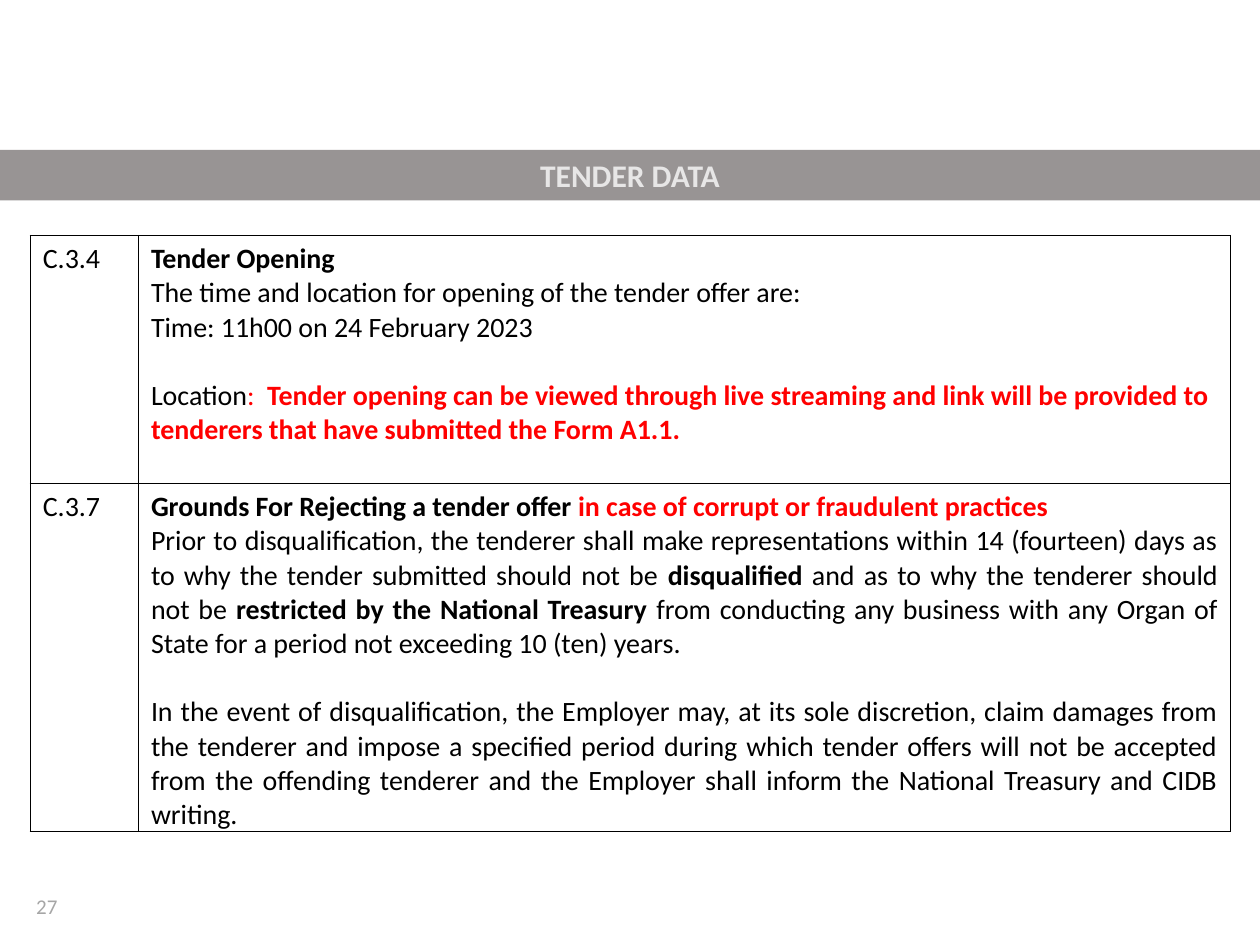
from lxml import etree
from pptx import Presentation
from pptx import util as u
from pptx.dml.color import RGBColor
from pptx.enum import shapes, text
from pptx.oxml import ns

BLACK = RGBColor(0x00, 0x00, 0x00)
RED = RGBColor(0xFF, 0x00, 0x00)
BAND_GREY = RGBColor(0x98, 0x94, 0x94)
TITLE_GREY = RGBColor(0xE7, 0xE6, 0xE6)
NUMBER_GREY = RGBColor(0xA6, 0xA6, 0xA6)
LEFT, CENTER, JUSTIFY = text.PP_ALIGN.LEFT, text.PP_ALIGN.CENTER, text.PP_ALIGN.JUSTIFY
SLIDE_WIDTH = u.Cm(25.4)
LINE_GAP = 19.5

OPENING = [
    (LEFT, 0, [("Tender Opening", BLACK, True)]),
    (LEFT, 0, [("The time and location for opening of the tender offer are:", BLACK, False)]),
    (LEFT, 0, [("Time: 11h00 on 24 February 2023", BLACK, False)]),
    (LEFT, LINE_GAP, [
        ("Location", BLACK, False),
        (":  ", RED, False),
        ("Tender opening can be viewed through live streaming and link will be "
         "provided to tenderers that have submitted the Form A1.1.", RED, True),
    ]),
]
REJECTION = [
    (JUSTIFY, 0, [
        ("Grounds For Rejecting a tender offer ", BLACK, True),
        ("in case of corrupt or fraudulent practices", RED, True),
    ]),
    (JUSTIFY, 0, [
        ("Prior to disqualification, the tenderer shall make representations within 14 "
         "(fourteen) days as to why the tender submitted should not be ", BLACK, False),
        ("disqualified", BLACK, True),
        (" and as to why the tenderer should not be ", BLACK, False),
        ("restricted by the National Treasury ", BLACK, True),
        ("from conducting any business with any Organ of State for a period not "
         "exceeding 10 (ten) years.", BLACK, False),
    ]),
    (JUSTIFY, LINE_GAP, [
        ("In the event of disqualification, the Employer may, at its sole discretion, claim "
         "damages from the tenderer and impose a specified period during which tender offers "
         "will not be accepted from the offending tenderer and the Employer shall inform the "
         "National Treasury and CIDB writing.", BLACK, False),
    ]),
]


def label(words, color=BLACK, bold=False, align=LEFT):
    return [(align, 0, [(words, color, bold)])]


class TenderPage:
    """Draws the elements of one tender briefing page in a shared style."""

    def __init__(self, page, font="Calibri"):
        self.page = page
        self.font = font

    def add_paragraphs(self, frame, paragraphs, size):
        frame.word_wrap = True
        for index, (align, before, spans) in enumerate(paragraphs):
            para = frame.add_paragraph() if index else frame.paragraphs[0]
            para.alignment = align
            if before:
                para.space_before = u.Pt(before)
            for words, color, bold in spans:
                span = para.add_run()
                span.text = words
                span.font.name = self.font
                span.font.size = u.Pt(size)
                span.font.bold = bold
                span.font.color.rgb = color

    def band(self, title, top, height):
        box = self.page.shapes.add_shape(
            shapes.MSO_SHAPE.RECTANGLE, 0, top, SLIDE_WIDTH, height)
        box.shadow.inherit = False
        box.fill.solid()
        box.fill.fore_color.rgb = BAND_GREY
        box.line.fill.background()
        self.add_paragraphs(box.text_frame, label(title, TITLE_GREY, True, CENTER), 18)

    def number(self, words, left, top, width, height):
        box = self.page.shapes.add_textbox(left, top, width, height)
        self.add_paragraphs(box.text_frame, label(words, NUMBER_GREY), 12)

    def border(self, cell):
        properties = cell._tc.get_or_add_tcPr()
        for side in ("a:lnL", "a:lnR", "a:lnT", "a:lnB"):
            line = etree.SubElement(properties, ns.qn(side), w=str(u.Pt(1)))
            fill = etree.SubElement(line, ns.qn("a:solidFill"))
            etree.SubElement(fill, ns.qn("a:srgbClr"), val=str(BLACK))

    def table(self, rows, left, top, widths, heights):
        table = self.page.shapes.add_table(
            len(rows), len(widths), left, top, sum(widths), sum(heights)).table
        table.first_row = table.horz_banding = False
        for column, width in zip(table.columns, widths):
            column.width = width
        for row, height, contents in zip(table.rows, heights, rows):
            row.height = height
            for cell, paragraphs in zip(row.cells, contents):
                self.border(cell)
                cell.fill.background()
                cell.margin_bottom = 0
                self.add_paragraphs(cell.text_frame, paragraphs, 16)


def main():
    deck = Presentation()
    deck.slide_width, deck.slide_height = SLIDE_WIDTH, u.Cm(19.05)
    tender = TenderPage(deck.slides.add_slide(deck.slide_layouts[6]))
    tender.number("27", u.Cm(0.48), u.Cm(17.88), u.Cm(5.72), u.Cm(1.02))
    tender.band("TENDER DATA", u.Cm(3.02), u.Cm(1.02))
    tender.table(
        [(label("C.3.4"), OPENING), (label("C.3.7"), REJECTION)],
        u.Cm(0.61), u.Cm(4.75),
        [u.Cm(2.18), u.Cm(22.02)], [u.Cm(5), u.Cm(7.01)])
    deck.save("out.pptx")


if __name__ == "__main__":
    main()
